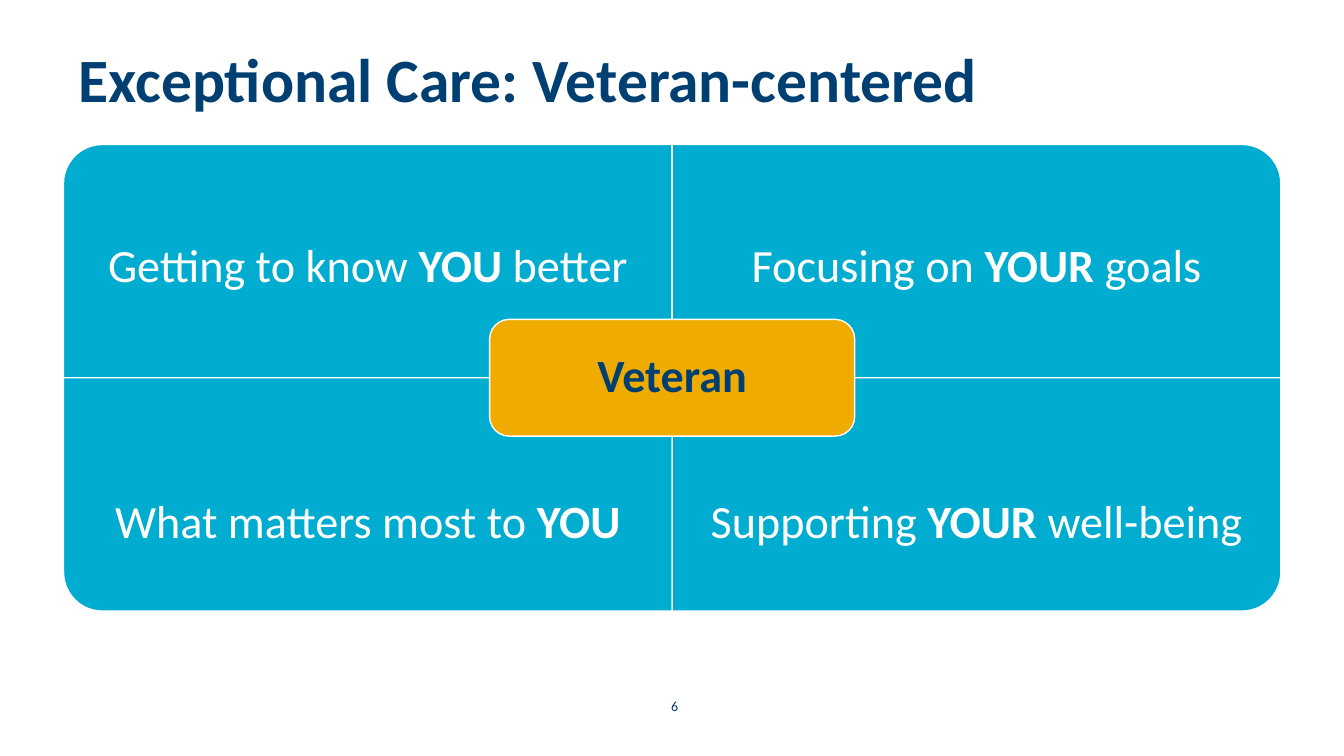
from dataclasses import dataclass

from pptx import Presentation
from pptx import util as u
from pptx.dml.color import RGBColor
from pptx.enum import shapes, text
from pptx.shapes.autoshape import Shape

NAVY, TEAL, GOLD, WHITE = "003F72", "00ADD0", "F0AB00", "FFFFFF"
FONT = "Calibri"

# Panel geometry in centimetres
CENTER_X, CENTER_Y = 16.94, 9.52
QUADRANT_W, QUADRANT_H = 15.34, 5.88
LABEL_H = 4.42
LABEL_SIZE = 33


@dataclass
class Quadrant:
    column: int
    row: int
    rotation: int
    label_top: float
    before: str
    emphasis: str
    after: str = ""


QUADRANTS = [
    Quadrant(0, 0, 270, 4.53, "Getting to know ", "YOU", " better"),
    Quadrant(1, 0, 0, 4.53, "Focusing on ", "YOUR", " goals"),
    Quadrant(0, 1, 180, 10.99, "What matters most to ", "YOU"),
    Quadrant(1, 1, 90, 10.99, "Supporting ", "YOUR", " well-being"),
]


def color(hex_value: str) -> RGBColor:
    return RGBColor.from_string(hex_value)


def write(shape: Shape, runs: list[tuple[str, bool]], *, size: float,
          ink: str, align=text.PP_ALIGN.CENTER, anchor=text.MSO_ANCHOR.MIDDLE,
          inset: float | None = None, spacing: float = 0.9) -> None:
    """Fill a shape with one paragraph of (wording, bold) runs."""
    frame = shape.text_frame
    frame.word_wrap = True
    frame.vertical_anchor = anchor
    if inset is not None:
        frame.margin_left = frame.margin_right = u.Cm(inset)
        frame.margin_top = frame.margin_bottom = u.Cm(inset)
    paragraph = frame.paragraphs[0]
    paragraph.alignment = align
    paragraph.line_spacing = spacing
    for wording, bold in runs:
        run = paragraph.add_run()
        run.text = wording
        run.font.name = FONT
        run.font.size = u.Pt(size)
        run.font.bold = bold
        run.font.color.rgb = color(ink)


def add_text(slide, left: float, top: float, width: float, height: float,
             runs: list[tuple[str, bool]], **style) -> None:
    box = slide.shapes.add_textbox(*map(u.Cm, (left, top, width, height)))
    write(box, runs, **style)


def add_block(slide, kind: shapes.MSO_SHAPE, center_x: float, center_y: float,
              width: float, height: float, fill: str, rotation: int = 0) -> Shape:
    """Draw a white-edged block; width and height are as seen after rotation."""
    if rotation % 180:
        width, height = height, width
    block = slide.shapes.add_shape(
        kind, u.Cm(center_x - width / 2), u.Cm(center_y - height / 2),
        u.Cm(width), u.Cm(height))
    block.rotation = rotation
    block.shadow.inherit = False
    block.fill.solid()
    block.fill.fore_color.rgb = color(fill)
    block.line.color.rgb = color(WHITE)
    block.line.width = u.Pt(1)
    return block


def add_quadrant(slide, quadrant: Quadrant) -> None:
    left = CENTER_X + (quadrant.column - 1) * QUADRANT_W
    top = CENTER_Y + (quadrant.row - 1) * QUADRANT_H
    add_block(slide, shapes.MSO_SHAPE.ROUND_1_RECTANGLE,
              left + QUADRANT_W / 2, top + QUADRANT_H / 2,
              QUADRANT_W, QUADRANT_H, TEAL, quadrant.rotation)
    runs = [(quadrant.before, False), (quadrant.emphasis, True)]
    if quadrant.after:
        runs.append((quadrant.after, False))
    add_text(slide, left, quadrant.label_top, QUADRANT_W, LABEL_H, runs,
             size=LABEL_SIZE, ink=WHITE, inset=0.66)


def main() -> None:
    deck = Presentation()
    deck.slide_width, deck.slide_height = u.Cm(33.87), u.Cm(19.05)
    slide = deck.slides.add_slide(deck.slide_layouts[6])

    # Title and page number
    add_text(slide, 1.73, 1.12, 30.7, 3.68,
             [("Exceptional Care: Veteran-centered", True)], size=44, ink=NAVY,
             align=text.PP_ALIGN.LEFT, anchor=text.MSO_ANCHOR.TOP)
    add_text(slide, 15.39, 17.27, 3.23, 1.02, [("6", False)],
             size=10, ink=NAVY, spacing=1.0)

    # Four quadrants
    for quadrant in QUADRANTS:
        add_quadrant(slide, quadrant)

    # Center block
    veteran = add_block(slide, shapes.MSO_SHAPE.ROUNDED_RECTANGLE,
                        CENTER_X, CENTER_Y, 9.2, 2.94, GOLD)
    write(veteran, [("Veteran", True)], size=LABEL_SIZE, ink=NAVY, inset=0.36)

    deck.save("out.pptx")


if __name__ == "__main__":
    main()
